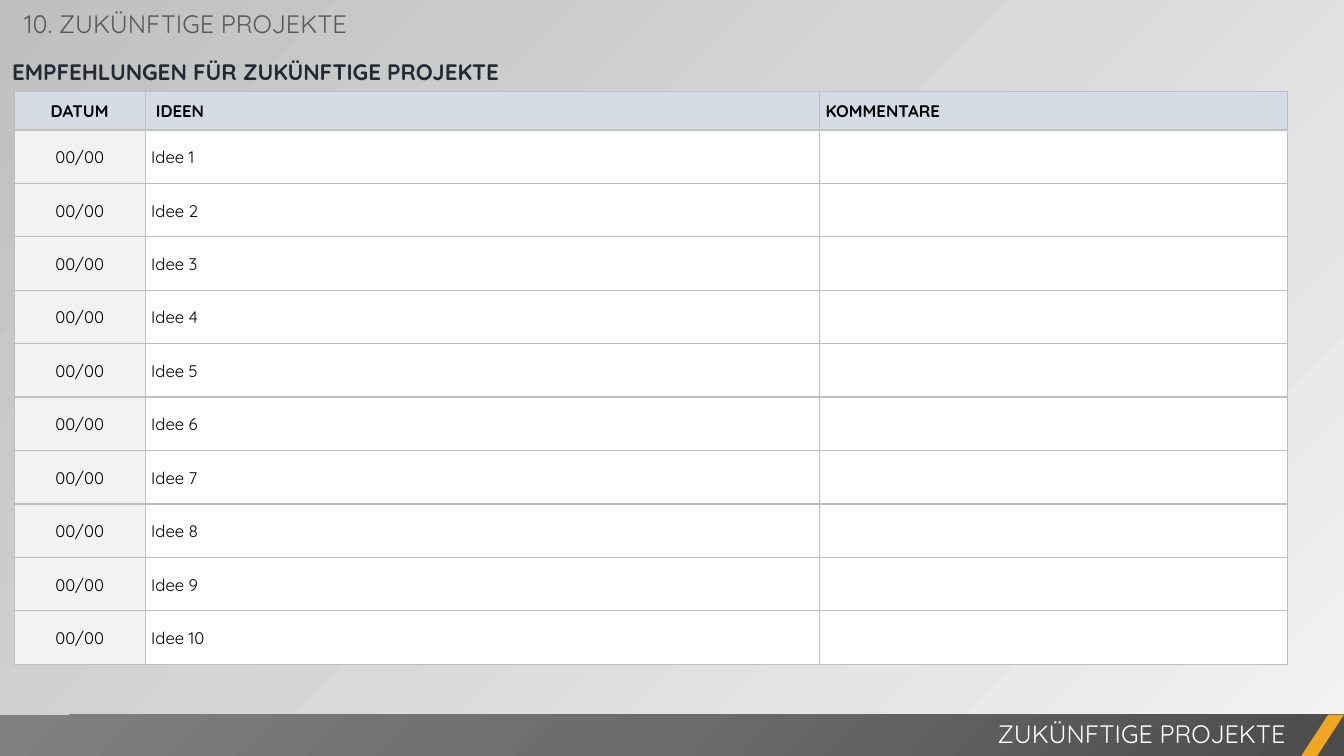
from lxml.etree import SubElement
from pptx import Presentation
from pptx.dml.color import RGBColor
from pptx.enum.shapes import MSO_SHAPE as Shape
from pptx.enum.text import MSO_ANCHOR as Anchor, MSO_AUTO_SIZE as AutoSize, PP_ALIGN as Align
from pptx.oxml.ns import qn
from pptx.util import Inches, Pt

FONT = "Quicksand"
BLACK = RGBColor(0x00, 0x00, 0x00)
WHITE = RGBColor(0xFF, 0xFF, 0xFF)
NAVY = RGBColor(0x22, 0x2A, 0x35)
GRAY = RGBColor(0x59, 0x59, 0x59)
SILVER = RGBColor(0xBF, 0xBF, 0xBF)
PALE = RGBColor(0xF2, 0xF2, 0xF2)
HEADER_BLUE = RGBColor(0xD6, 0xDC, 0xE5)
ORANGE = RGBColor(0xF0, 0xA6, 0x22)
FOOTER_STOPS = (
    (0, RGBColor(0x4C, 0x4C, 0x4C)),
    (50, RGBColor(0x6B, 0x6B, 0x6B)),
    (100, RGBColor(0x80, 0x80, 0x80)),
)
HEADINGS = ("DATUM", " IDEEN", "KOMMENTARE")
IDEAS = [("00/00", f"Idee {number}", "") for number in range(1, 11)]
COLUMN_WIDTHS = (1.3, 6.69, 4.64)
HEADER_HEIGHT = 0.38


def write(frame, text, size, color, bold=False, align=Align.LEFT):
    frame.text = text
    paragraph = frame.paragraphs[0]
    paragraph.alignment = align
    for run in paragraph.runs:
        run.font.name = FONT
        run.font.size = Pt(size)
        run.font.bold = bold
        run.font.color.rgb = color
    return paragraph


def place(shape, left, top, width, height):
    shape.left, shape.top = Inches(left), Inches(top)
    shape.width, shape.height = Inches(width), Inches(height)


def add_label(slide, box, text, size, color, **style):
    label = slide.shapes.add_textbox(*map(Inches, box))
    label.text_frame.word_wrap = True
    return label.text_frame, write(label.text_frame, text, size, color, **style)


def add_plain_shape(slide, kind, box, color):
    shape = slide.shapes.add_shape(kind, *map(Inches, box))
    shape.shadow.inherit = False
    shape.line.fill.background()
    shape.fill.solid()
    shape.fill.fore_color.rgb = color
    return shape


def paint_background(slide):
    fill = slide.background.fill
    fill.gradient()
    fill.gradient_angle = 135
    for stop, color in zip(fill.gradient_stops, (PALE, SILVER)):
        stop.color.rgb = color


def add_headings(slide, left, top, width, height):
    title = slide.shapes.title
    place(title, left + 0.14, top + 0.03, width, height)
    frame = title.text_frame
    frame.word_wrap = True
    frame.auto_size = AutoSize.NONE
    frame.vertical_anchor = Anchor.TOP
    write(frame, "10. ZUKÜNFTIGE PROJEKTE", 18, GRAY)

    frame, subtitle = add_label(
        slide, (left, top + 0.46, width, 0.41),
        "EMPFEHLUNGEN FÜR ZUKÜNFTIGE PROJEKTE", 16, NAVY, bold=True)
    frame.margin_left = frame.margin_right = Inches(0.12)
    frame.margin_top = frame.margin_bottom = Inches(0.06)
    subtitle.line_spacing = 1.2
    subtitle.space_before = Pt(3.2)


def draw_borders(cell):
    properties = cell._tc.get_or_add_tcPr()
    for side in ("a:lnL", "a:lnR", "a:lnT", "a:lnB"):
        border = SubElement(properties, qn(side), w=str(Pt(1)))
        fill = SubElement(border, qn("a:solidFill"))
        SubElement(fill, qn("a:srgbClr"), val=str(SILVER))


def fill_cell(cell, text, color, bold, align):
    draw_borders(cell)
    cell.fill.solid()
    cell.fill.fore_color.rgb = color
    cell.vertical_anchor = Anchor.MIDDLE
    cell.margin_left = cell.margin_right = Inches(0.06)
    cell.margin_top = cell.margin_bottom = 0
    write(cell.text_frame, text, 12, BLACK, bold, align).line_spacing = 1.07


def add_ideas_table(slide, left, top, width, height):
    rows = [HEADINGS, *IDEAS]
    table = slide.shapes.add_table(
        len(rows), len(HEADINGS), *map(Inches, (left, top, width, height))).table
    table.horz_banding = False
    for column, column_width in zip(table.columns, COLUMN_WIDTHS):
        column.width = Inches(column_width)
    idea_height = (height - HEADER_HEIGHT) / len(IDEAS)
    for r, texts in enumerate(rows):
        is_header = r == 0
        table.rows[r].height = Inches(HEADER_HEIGHT if is_header else idea_height)
        for c, text in enumerate(texts):
            is_date = c == 0
            color = HEADER_BLUE if is_header else PALE if is_date else WHITE
            align = Align.CENTER if is_date else Align.LEFT
            fill_cell(table.cell(r, c), text, color, is_header, align)


def shade_from_corner(shape, stops):
    shape.fill.gradient()
    gradient = shape._element.spPr.find(qn("a:gradFill"))
    for child in list(gradient):
        gradient.remove(child)
    stop_list = SubElement(gradient, qn("a:gsLst"))
    for percent, color in stops:
        stop = SubElement(stop_list, qn("a:gs"), pos=str(percent * 1000))
        SubElement(stop, qn("a:srgbClr"), val=str(color))
    circle = SubElement(gradient, qn("a:path"), path="circle")
    SubElement(circle, qn("a:fillToRect"), l="100000", t="100000")


def add_footer(slide, left, top, width, height):
    bar = add_plain_shape(slide, Shape.RECTANGLE, (left, top, width, height), GRAY)
    shade_from_corner(bar, FOOTER_STOPS)
    add_label(slide, (left + 5.25, top - 0.01, 7.6, 0.4),
              "ZUKÜNFTIGE PROJEKTE", 18, WHITE, align=Align.RIGHT)
    accent_width = 0.43
    accent = add_plain_shape(
        slide, Shape.PARALLELOGRAM,
        (left + width - accent_width, top, accent_width, height), ORANGE)
    accent.adjustments[0] = 0.65


def main():
    deck = Presentation()
    deck.slide_width, deck.slide_height = Inches(13.33), Inches(7.5)
    slide = deck.slides.add_slide(deck.slide_layouts[5])
    paint_background(slide)
    add_ideas_table(slide, 0.14, 0.91, 12.63, 5.68)
    add_headings(slide, 0, 0, 8.36, 0.4)
    add_footer(slide, 0, 7.09, 13.33, 0.42)
    deck.save("out.pptx")


if __name__ == "__main__":
    main()
